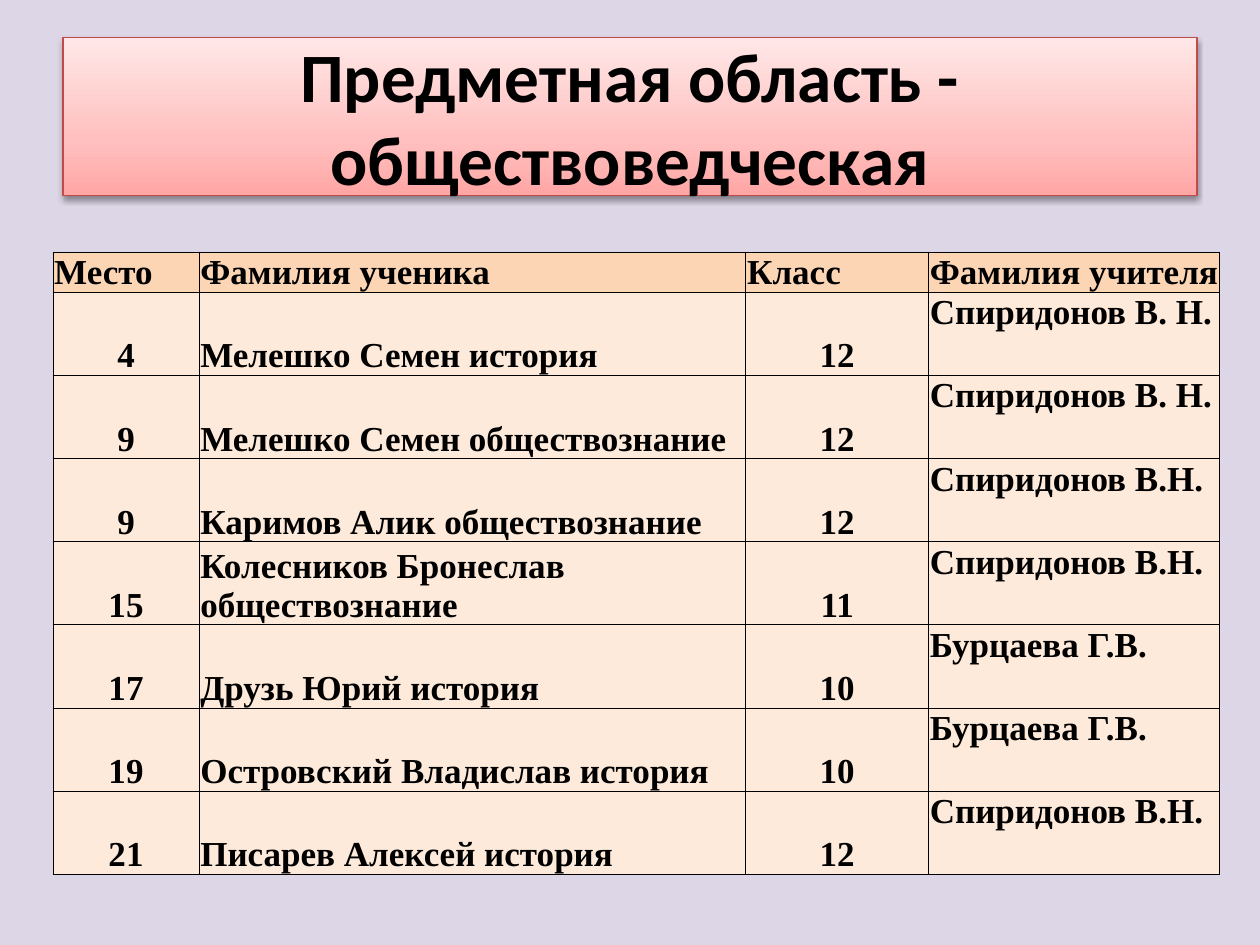
"""Build a slide with a title bar and a table of pupils' places."""
from dataclasses import dataclass

from lxml.etree import SubElement
from pptx import Presentation
from pptx.dml.color import RGBColor
from pptx.enum.shapes import MSO_SHAPE
from pptx.enum.text import MSO_ANCHOR, PP_ALIGN
from pptx.oxml.ns import qn
from pptx.util import Inches, Pt

COLS, ROWS, UNIT = 100, 75, 0.1
HUES = {"back": "DDD6E7", "ink": "000000", "edge": "BF4C48", "head": "FCD5B5", "body": "FDEADA"}
FADE = {0: "FFA6A5", 35: "FFC0BF", 100: "FFE7E7"}
WIDTHS = (11.6, 43.4, 14.5, 23.1)
HEAD_ROW, BODY_ROW = 3.2, 6.6
HEADS = ("Место", "Фамилия ученика", "Класс", "Фамилия учителя")


@dataclass(frozen=True)
class Pupil:
    place: str
    name: str
    form: str
    tutor: str

    def texts(self) -> tuple:
        return self.place, self.name, self.form, self.tutor


PUPILS = (
    Pupil("4", "Мелешко Семен история", "12", "Спиридонов В. Н."),
    Pupil("9", "Мелешко Семен обществознание", "12", "Спиридонов В. Н."),
    Pupil("9", "Каримов Алик обществознание", "12", "Спиридонов В.Н."),
    Pupil("15", "Колесников Бронеслав обществознание", "11", "Спиридонов В.Н."),
    Pupil("17", "Друзь Юрий история", "10", "Бурцаева Г.В."),
    Pupil("19", "Островский Владислав история", "10", "Бурцаева Г.В."),
    Pupil("21", "Писарев Алексей история", "12", "Спиридонов В.Н."),
)


def span(count: float) -> int:
    return Inches(count * UNIT)


def tint(name: str) -> RGBColor:
    return RGBColor.from_string(HUES[name])


def add_node(root, tag: str, **attrs):
    return SubElement(root, qn(tag), {key: str(val) for key, val in attrs.items()})


def set_text(frame, text: str, font: str, size: float, align) -> None:
    frame.text = text
    line = frame.paragraphs[0]
    line.alignment = align
    style = line.runs[0].font
    style.name, style.size, style.bold = font, Pt(size), True
    style.color.rgb = tint("ink")


def draw_title(slide, text: str) -> None:
    bar = slide.shapes.add_shape(MSO_SHAPE.RECTANGLE, span(5), span(3), span(90), span(12.5))
    bar.fill.gradient()
    bar.fill.gradient_angle = 90
    stops = bar._element.spPr.find(".//" + qn("a:gsLst"))
    stops.clear()
    for place, shade in FADE.items():
        stop = add_node(stops, "a:gs", pos=place * 1000)
        add_node(stop, "a:srgbClr", val=shade)
    bar.line.color.rgb = tint("edge")
    bar.line.width = Pt(0.75)
    bar.shadow.inherit = False
    glow = add_node(bar._element.spPr.find(qn("a:effectLst")), "a:outerShdw",
                    blurRad=Pt(3.1), dist=Pt(1.6), dir=90 * 60000, rotWithShape=0)
    add_node(add_node(glow, "a:srgbClr", val=HUES["ink"]), "a:alpha", val=38000)
    bar.text_frame.word_wrap = True
    bar.text_frame.vertical_anchor = MSO_ANCHOR.MIDDLE
    set_text(bar.text_frame, text, "Calibri", 39.6, PP_ALIGN.CENTER)


def draw_cell(cell, text: str, hue: str, align, anchor) -> None:
    cell.margin_left = cell.margin_right = cell.margin_top = Inches(0.01)
    cell.margin_bottom = 0
    cell.vertical_anchor = anchor
    for side in "LRTB":
        edge = add_node(cell._tc.get_or_add_tcPr(), f"a:ln{side}", w=Pt(0.5))
        add_node(add_node(edge, "a:solidFill"), "a:srgbClr", val=HUES["ink"])
    cell.fill.solid()
    cell.fill.fore_color.rgb = tint(hue)
    set_text(cell.text_frame, text, "Times New Roman", 20, align)


def draw_table(slide) -> None:
    lines = (HEADS, *(pupil.texts() for pupil in PUPILS))
    high = HEAD_ROW + BODY_ROW * len(PUPILS)
    grid = slide.shapes.add_table(len(lines), len(HEADS), span(4.2), span(20),
                                  span(sum(WIDTHS)), span(high)).table
    grid.first_row = grid.horz_banding = False
    for col, width in zip(grid.columns, WIDTHS):
        col.width = span(width)
    for i, texts in enumerate(lines):
        grid.rows[i].height = span(BODY_ROW if i else HEAD_ROW)
        for j, text in enumerate(texts):
            align = PP_ALIGN.CENTER if i and j in (0, 2) else PP_ALIGN.LEFT
            anchor = MSO_ANCHOR.TOP if i and j == 3 else MSO_ANCHOR.BOTTOM
            draw_cell(grid.cell(i, j), text, "body" if i else "head", align, anchor)


def main() -> None:
    deck = Presentation()
    deck.slide_width, deck.slide_height = span(COLS), span(ROWS)
    slide = deck.slides.add_slide(deck.slide_layouts[6])
    slide.background.fill.solid()
    slide.background.fill.fore_color.rgb = tint("back")
    draw_title(slide, "Предметная область - обществоведческая")
    draw_table(slide)
    deck.save("out.pptx")


if __name__ == "__main__":
    main()
